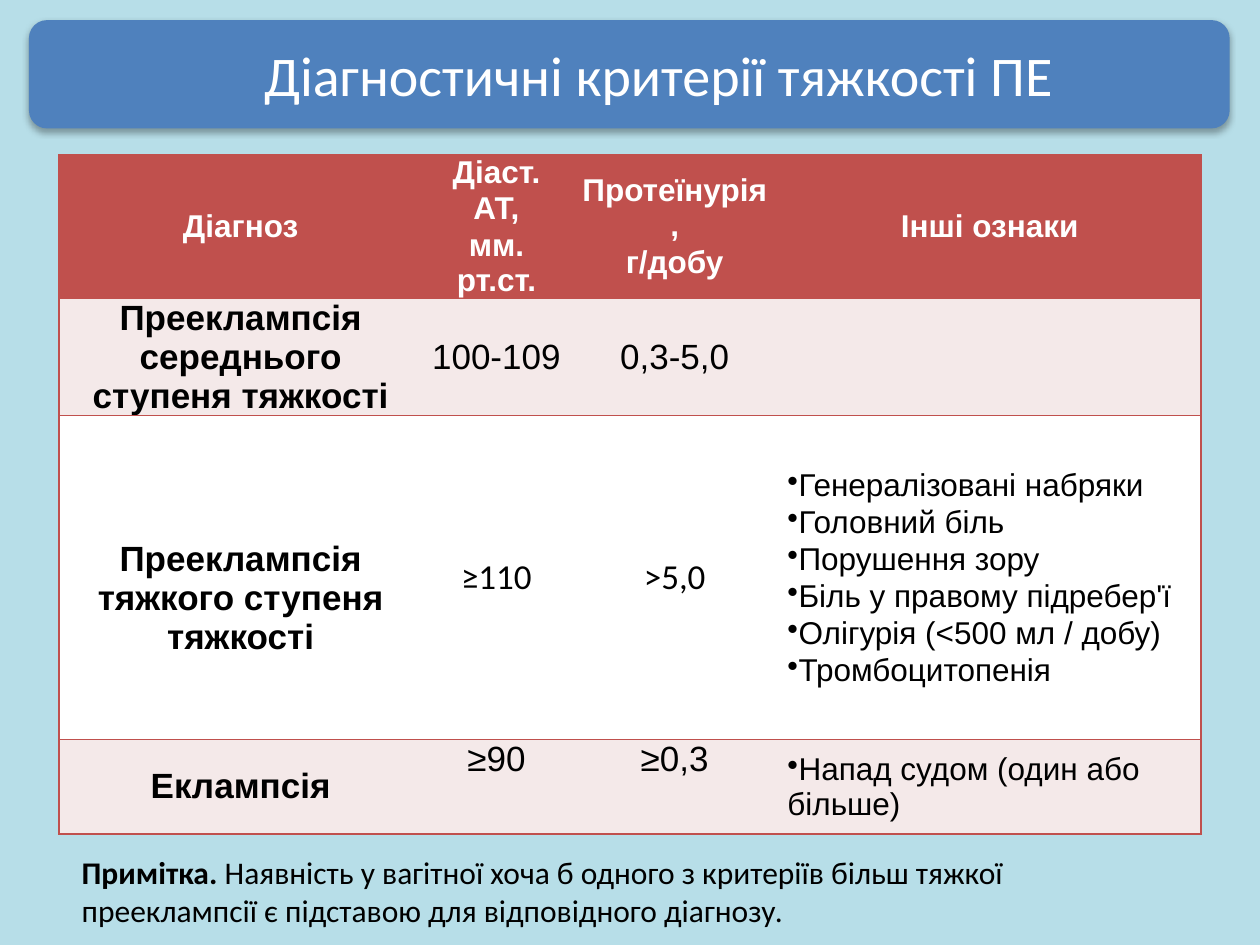
from lxml.etree import Element, SubElement
from pptx import Presentation
from pptx.dml.color import RGBColor
from pptx.enum.shapes import MSO_SHAPE
from pptx.enum.text import MSO_ANCHOR, PP_ALIGN
from pptx.oxml.ns import qn
from pptx.util import Inches, Pt

ROUND = MSO_SHAPE.ROUNDED_RECTANGLE
TOP, MIDDLE = MSO_ANCHOR.TOP, MSO_ANCHOR.MIDDLE
LEFT, CENTER = PP_ALIGN.LEFT, PP_ALIGN.CENTER
PLAIN = "{2D5ABB26-0587-4C30-8999-92F81FD0307C}"
RED, PINK, WHITE, BLACK = "C0504D", "F4E9E9", "FFFFFF", "000000"

HEAD = {"size": Pt(18), "bold": True, "color": WHITE}
NAME = {"size": Pt(20), "bold": True}
VALUE = {"size": Pt(20)}
ROMAN = {"size": Pt(20), "name": "Calibri"}
SIGNS = {"size": Pt(18)}
NOTE = {"size": Pt(18), "name": "Calibri"}

COLS = [2.88, 1.18, 1.65, 3.35]
ROWS = [1.14, 0.93, 2.57, 0.75]
FILLS = [RED, PINK, WHITE, PINK]
CELLS = [
    [(["Діагноз"], HEAD), (["Діаст. АТ,", "мм. рт.ст."], HEAD),
     (["Протеїнурія,", "г/добу"], HEAD), (["Інші ознаки"], HEAD)],
    [(["Прееклампсія середнього ступеня тяжкості"], NAME),
     (["100-109"], VALUE), (["0,3-5,0"], VALUE), ([], SIGNS)],
    [(["Прееклампсія тяжкого ступеня тяжкості"], NAME),
     (["≥110"], ROMAN), ([">5,0"], ROMAN),
     (["Генералізовані набряки", "Головний біль", "Порушення зору",
       "Біль у правому підребер'ї", "Олігурія (<500 мл / добу)",
       "Тромбоцитопенія"], SIGNS)],
    [(["Еклампсія"], NAME), (["≥90"], VALUE), (["≥0,3"], VALUE),
     (["Напад судом (один або більше)"], SIGNS)],
]


def paint(code):
    return RGBColor.from_string(code)


def tint(parent, code):
    fill = SubElement(parent, qn("a:solidFill"))
    return SubElement(fill, qn("a:srgbClr"), val=code)


class Deck:
    base = {"name": "Arial", "bold": False, "color": BLACK}

    def __init__(self):
        self.show = Presentation()
        self.show.slide_width, self.show.slide_height = Inches(10), Inches(7.5)
        self.slide = self.show.slides.add_slide(self.show.slide_layouts[6])

    def back(self, code):
        fill = self.slide.background.fill
        fill.solid()
        fill.fore_color.rgb = paint(code)

    def label(self, para, text, form):
        run = para.add_run()
        run.text = text
        for key, value in {**self.base, **form}.items():
            if key == "color":
                run.font.color.rgb = paint(value)
            else:
                setattr(run.font, key, value)

    def banner(self, text, box, code, form):
        shape = self.slide.shapes.add_shape(ROUND, *map(Inches, box))
        shape.fill.solid()
        shape.fill.fore_color.rgb = paint(code)
        shape.line.fill.background()
        shape.shadow.inherit = False
        glow = shape._element.spPr.find(qn("a:effectLst"))
        cast = SubElement(glow, qn("a:outerShdw"), blurRad=str(Pt(3.5)),
                          dist=str(Pt(2.2)), dir="5400000", rotWithShape="0")
        hue = SubElement(cast, qn("a:srgbClr"), val=BLACK)
        SubElement(hue, qn("a:alpha"), val="32000")
        frame = shape.text_frame
        frame.word_wrap = True
        frame.vertical_anchor = MIDDLE
        para = frame.paragraphs[0]
        para.alignment = CENTER
        para._p.get_or_add_pPr().set("indent", str(Inches(0.47)))
        self.label(para, text, form)

    def note(self, parts, box):
        frame = self.slide.shapes.add_textbox(*map(Inches, box)).text_frame
        frame.word_wrap = True
        for text, form in parts:
            self.label(frame.paragraphs[0], text, form)

    def border(self, cell, sides):
        props = cell._tc.get_or_add_tcPr()
        for spot, side in enumerate(sides):
            line = Element(qn("a:ln" + side), w=str(Pt(1)))
            tint(line, RED)
            props.insert(spot, line)

    def fill(self, cell, lines, form, listed):
        frame = cell.text_frame
        for spot, text in enumerate(lines):
            para = frame.add_paragraph() if spot else frame.paragraphs[0]
            para.alignment = LEFT if listed else CENTER
            para.space_before = Pt(1)
            if listed:
                props = para._p.get_or_add_pPr()
                SubElement(props, qn("a:buChar"), char="•")
            self.label(para, text, form)

    def table(self, cells, box, cols, rows, fills):
        frame = self.slide.shapes.add_table(len(rows), len(cols), *map(Inches, box))
        grid = frame.table
        grid.first_row = grid.horz_banding = False
        grid._tbl.tblPr.find(qn("a:tableStyleId")).text = PLAIN
        for col, width in zip(grid.columns, cols):
            col.width = Inches(width)
        for row, height in zip(grid.rows, rows):
            row.height = Inches(height)
        style = {"margin_left": Inches(0.07), "margin_right": Inches(0.07),
                 "margin_top": 0, "margin_bottom": 0,
                 "vertical_anchor": MIDDLE}
        ends = {0: "L", len(cols) - 1: "R"}
        for r, line in enumerate(cells):
            for c, (lines, form) in enumerate(line):
                cell = grid.cell(r, c)
                for key, value in style.items():
                    setattr(cell, key, value)
                cell.fill.solid()
                cell.fill.fore_color.rgb = paint(fills[r])
                self.border(cell, ends.get(c, "") + "TB")
                self.fill(cell, lines, form, form is SIGNS)
        grid.cell(2, 0).margin_top = Inches(0.33)
        for c in (1, 2):
            grid.cell(3, c).vertical_anchor = TOP


def main():
    deck = Deck()
    deck.back("B7DEE8")
    deck.banner("Діагностичні критерії тяжкості ПЕ", (0.23, 0.16, 9.53, 0.86),
                "4F81BD", {"size": Pt(32), "name": "Calibri", "color": WHITE})
    deck.table(CELLS, (0.47, 1.23, sum(COLS), sum(ROWS)), COLS, ROWS, FILLS)
    deck.note([("Примітка. ", {**NOTE, "bold": True}),
               ("Наявність у вагітної хоча б одного з критеріїв більш тяжкої "
                "прееклампсії є підставою для відповідного діагнозу.", NOTE)],
              (0.55, 6.72, 8.91, 0.71))
    deck.show.save("out.pptx")


if __name__ == "__main__":
    main()
